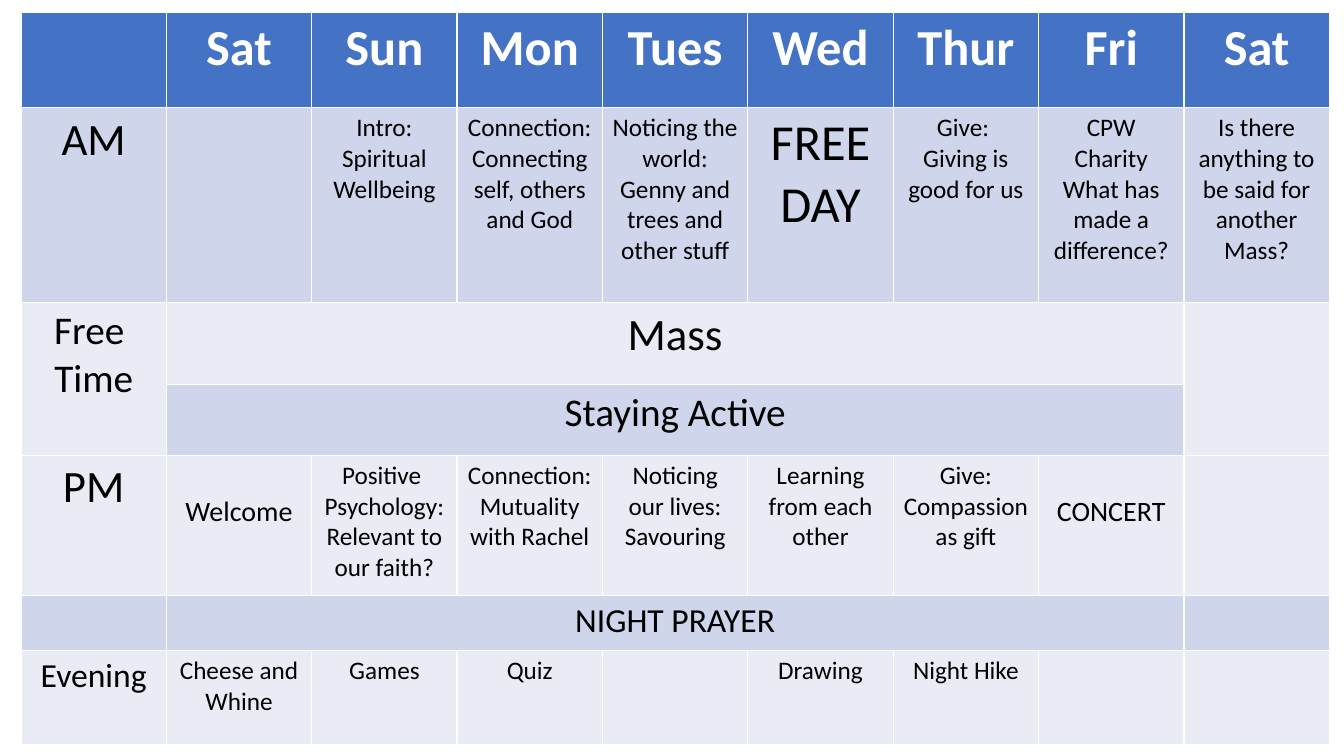
from pptx import Presentation
from pptx.dml.color import RGBColor
from pptx.enum.text import PP_ALIGN as Align
from pptx.util import Pt

BLUE, BAND, PALE = "4472C4", "CFD5EA", "E9EBF5"
COLUMN_WIDTH = 103.84

# Row height, fill, label size, entry size, texts from the label column onwards
timetable = [
    (67.6, BLUE, 36, 36,
     ["", "Sat", "Sun", "Mon", "Tues", "Wed", "Thur", "Fri", "Sat"]),
    (139.2, BAND, 32, 18,
     ["AM", "", "Intro:\nSpiritual\nWellbeing",
      "Connection:\nConnecting self, others and God",
      "Noticing the world:\nGenny and trees and other stuff",
      "FREE DAY", "Give: \nGiving is good for us",
      "CPW\nCharity\nWhat has made a difference?",
      "Is there anything to be said for another Mass?"]),
    (58.6, PALE, 28, 32, ["Free \nTime", "Mass"]),
    (50.6, BAND, 28, 28, ["", "Staying Active"]),
    (100.4, PALE, 32, 18,
     ["PM", "Welcome", "Positive \nPsychology:\nRelevant to our faith?",
      "Connection:\nMutuality\nwith Rachel", "Noticing our lives: Savouring",
      "Learning from each other", "Give:\nCompassion as gift", "CONCERT", ""]),
    (38.9, BAND, 24, 24, ["", "NIGHT PRAYER"]),
    (67.6, PALE, 24, 18,
     ["Evening", "Cheese and Whine", "Games", "Quiz", "", "Drawing",
      "Night Hike", "", ""]),
]
special_sizes = {"FREE DAY": 36, "Welcome": 20, "CONCERT": 20}
lowered_entries = ("Welcome", "CONCERT")
all_week_rows = (2, 3, 5)


def color(hex_code):
    return RGBColor.from_string(hex_code)


def write_entry(cell, text, size, text_color, bold):
    """Fill a cell with centred lines, one paragraph for each."""
    frame = cell.text_frame
    for number, line in enumerate(text.split("\n")):
        paragraph = frame.add_paragraph() if number else frame.paragraphs[0]
        paragraph.alignment = Align.CENTER
        run = paragraph.add_run()
        run.text = line
        run.font.name = "Calibri"
        run.font.size = Pt(size)
        run.font.bold = bold
        run.font.color.rgb = color(text_color)


deck = Presentation()
deck.slide_width, deck.slide_height = Pt(960), Pt(540)
slide = deck.slides.add_slide(deck.slide_layouts[6])

table = slide.shapes.add_table(
    len(timetable), 9, Pt(15), Pt(9.2), Pt(9 * COLUMN_WIDTH),
    Pt(sum(row[0] for row in timetable))).table
for column in table.columns:
    column.width = Pt(COLUMN_WIDTH)

for row, (height, fill, label_size, entry_size, texts) in enumerate(timetable):
    table.rows[row].height = Pt(height)
    for column in range(9):
        cell = table.cell(row, column)
        cell.fill.solid()
        cell.fill.fore_color.rgb = color(fill)
    for column, text in enumerate(texts):
        if not text:
            continue
        cell = table.cell(row, column)
        size = special_sizes.get(text, entry_size if column else label_size)
        is_header = row == 0
        write_entry(cell, text, size, "FFFFFF" if is_header else "000000", is_header)
        if text in lowered_entries:
            cell.margin_top = Pt(28)

for row in all_week_rows:
    table.cell(row, 1).merge(table.cell(row, 7))
for column in (0, 8):
    table.cell(2, column).merge(table.cell(3, column))

deck.save("out.pptx")
